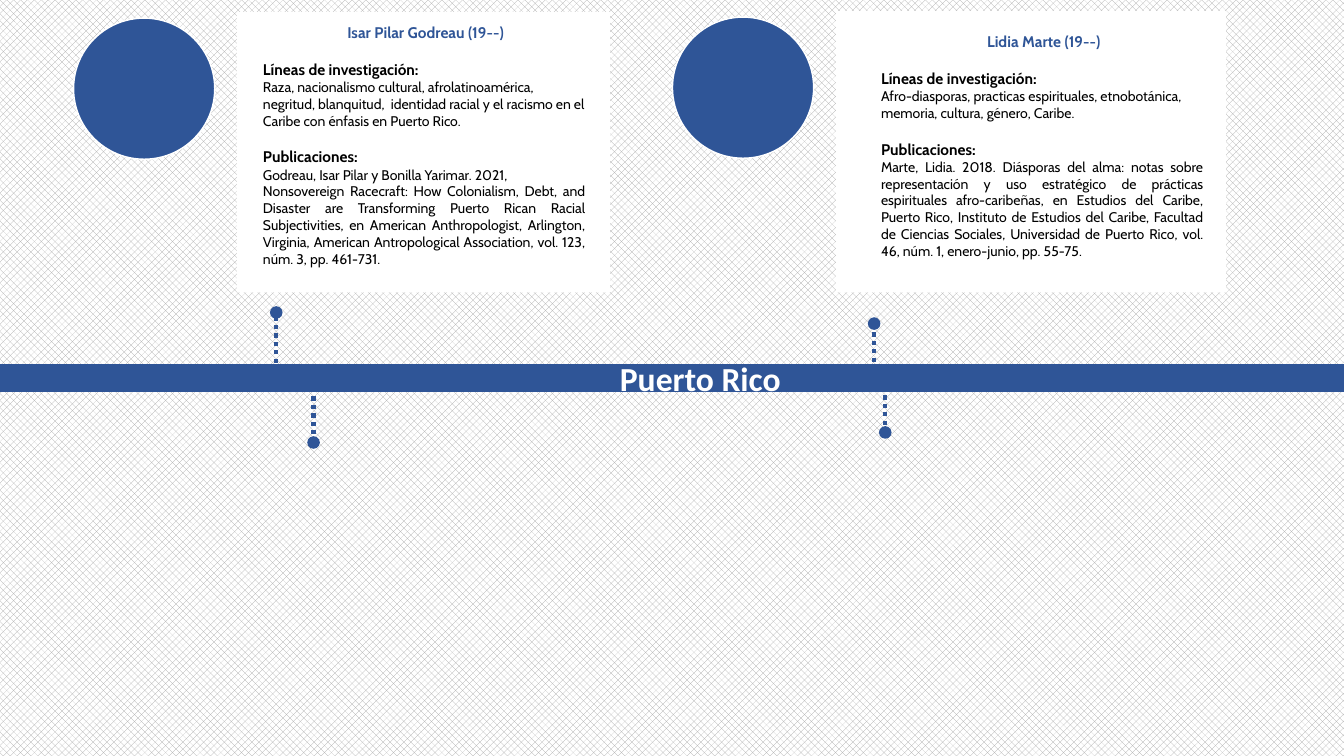
from lxml import etree
from pptx import Presentation
from pptx.dml.color import RGBColor
from pptx.enum.dml import MSO_LINE, MSO_PATTERN
from pptx.enum.shapes import MSO_CONNECTOR, MSO_SHAPE
from pptx.enum.text import MSO_AUTO_SIZE, PP_ALIGN
from pptx.oxml.ns import qn
from pptx.util import Inches, Pt

BLUE = RGBColor(0x2F, 0x55, 0x97)
WHITE = RGBColor(0xFF, 0xFF, 0xFF)
BLACK = RGBColor(0x00, 0x00, 0x00)
GRAY = RGBColor(0xA6, 0xA6, 0xA6)
RECTANGLE, OVAL = MSO_SHAPE.RECTANGLE, MSO_SHAPE.OVAL
STRAIGHT = MSO_CONNECTOR.STRAIGHT
ROUND_DOT = MSO_LINE.ROUND_DOT
HATCH = MSO_PATTERN.PERCENT_50
FIT_TEXT = MSO_AUTO_SIZE.SHAPE_TO_FIT_TEXT
LEFT, CENTER, JUSTIFY = PP_ALIGN.LEFT, PP_ALIGN.CENTER, PP_ALIGN.JUSTIFY

SLIDE_WIDTH, SLIDE_HEIGHT = 13.33, 7.5
PHOTO_SIZE, CARD_OFFSET, PHOTO_DROP = 1.4, 1.62, 0.06
PROFILE_WIDTH = 3.39
SECTION_GAP = 13.2

GODREAU = [
    ("name", " Isar Pilar Godreau (19--)"),
    ("heading", "Líneas de investigación:"),
    ("body", "Raza, nacionalismo cultural, afrolatinoamérica, negritud, blanquitud,  "
             "identidad racial y el racismo en el Caribe con énfasis en Puerto Rico."),
    ("heading", "Publicaciones:"),
    ("body", "Godreau, Isar Pilar y Bonilla Yarimar. 2021,"),
    ("citation", "Nonsovereign Racecraft: How Colonialism, Debt, and Disaster are "
                 "Transforming Puerto Rican Racial Subjectivities, en American "
                 "Anthropologist, Arlington, Virginia, American Antropological "
                 "Association, vol. 123, núm. 3, pp. 461-731."),
]
MARTE = [
    ("name", " Lidia Marte (19--)"),
    ("heading", "Líneas de investigación:"),
    ("body", "Afro-diasporas, practicas espirituales, etnobotánica, memoria, "
             "cultura, género, Caribe."),
    ("heading", "Publicaciones:"),
    ("citation", "Marte, Lidia. 2018. Diásporas del alma: notas sobre representación "
                 "y uso estratégico de prácticas espirituales afro-caribeñas, en "
                 "Estudios del Caribe, Puerto Rico, Instituto de Estudios del Caribe, "
                 "Facultad de Ciencias Sociales, Universidad de Puerto Rico, vol. 46, "
                 "núm. 1, enero-junio, pp. 55-75."),
]
STYLES = {
    "name": (11, True, BLUE, CENTER, 0),
    "heading": (11, True, BLACK, LEFT, SECTION_GAP),
    "body": (10, False, BLACK, LEFT, 0),
    "citation": (10, False, BLACK, JUSTIFY, 0),
}
STEMS = [(2.74, 3.6, 3.1), (3.11, 3.85, 4.39), (8.67, 3.59, 3.21), (8.78, 3.84, 4.29)]


def add_filled(slide, kind, left, top, width, height, color):
    """Add a flat shape without outline and return it."""
    shape = slide.shapes.add_shape(
        kind, Inches(left), Inches(top), Inches(width), Inches(height))
    shape.shadow.inherit = False
    shape.fill.solid()
    shape.fill.fore_color.rgb = color
    shape.line.fill.background()
    return shape


def add_text(slide, left, top, width, height):
    """Add a wrapping text box that fits its text and return its frame."""
    frame = slide.shapes.add_textbox(
        Inches(left), Inches(top), Inches(width), Inches(height)).text_frame
    frame.word_wrap = True
    frame.auto_size = FIT_TEXT
    return frame


def write(paragraph, text, font_name, size, bold, color):
    """Put text in a paragraph and format its run."""
    paragraph.text = text
    font = paragraph.runs[0].font
    font.name, font.size, font.bold = font_name, Pt(size), bold
    font.color.rgb = color


def add_line(slide, start, end, weight):
    """Add a blue straight line without shadow and return it."""
    line = slide.shapes.add_connector(STRAIGHT, *map(Inches, start + end))
    line.line.color.rgb = BLUE
    line.line.width = Pt(weight)
    etree.SubElement(line.element.spPr, qn("a:effectLst"))
    return line


def add_stem(slide, x, base, tip):
    """Add a dotted stem that ends in a round marker."""
    stem = add_line(slide, (x, base), (x, tip), 3)
    stem.line.dash_style = ROUND_DOT
    etree.SubElement(stem.line._get_or_add_ln(), qn("a:tailEnd"), type="oval")


def add_timeline(slide, y):
    """Add the band across the slide with its title and stems."""
    add_line(slide, (0, y), (SLIDE_WIDTH, y), 20)
    title = add_text(slide, 6.05, y - 0.25, 2, 0.5)
    write(title.paragraphs[0], "Puerto Rico", "Calibri", 24, True, WHITE)
    for x, base, tip in STEMS:
        add_stem(slide, x, base, tip)


def add_researcher(slide, left, top, card_width, card_height, inset, profile):
    """Add a portrait disc and a card with the researcher's profile."""
    card_left = left + CARD_OFFSET
    inset_x, inset_y = inset
    add_filled(slide, RECTANGLE, card_left, top, card_width, card_height, WHITE)
    frame = add_text(slide, card_left + inset_x, top + inset_y, PROFILE_WIDTH, 2.55)
    for index, (role, text) in enumerate(profile):
        paragraph = frame.add_paragraph() if index else frame.paragraphs[0]
        size, bold, color, alignment, gap = STYLES[role]
        write(paragraph, text, "Cabin", size, bold, color)
        paragraph.alignment = alignment
        paragraph.space_before = Pt(gap)
    portrait = add_filled(
        slide, OVAL, left, top + PHOTO_DROP, PHOTO_SIZE, PHOTO_SIZE, BLUE)
    portrait.line.color.rgb = WHITE
    portrait.line.width = Pt(1)


def main():
    """Build the slide and save it."""
    deck = Presentation()
    deck.slide_width, deck.slide_height = Inches(SLIDE_WIDTH), Inches(SLIDE_HEIGHT)
    slide = deck.slides.add_slide(deck.slide_layouts[6])
    backdrop = slide.background.fill
    backdrop.patterned()
    backdrop.pattern = HATCH
    backdrop.fore_color.rgb = GRAY
    backdrop.back_color.rgb = WHITE
    add_timeline(slide, SLIDE_HEIGHT / 2)
    add_researcher(slide, 0.73, 0.12, 3.7, 2.78, (0.16, 0.06), GODREAU)
    add_researcher(slide, 6.67, 0.11, 3.87, 2.79, (0.35, 0.16), MARTE)
    deck.save("out.pptx")


if __name__ == "__main__":
    main()
